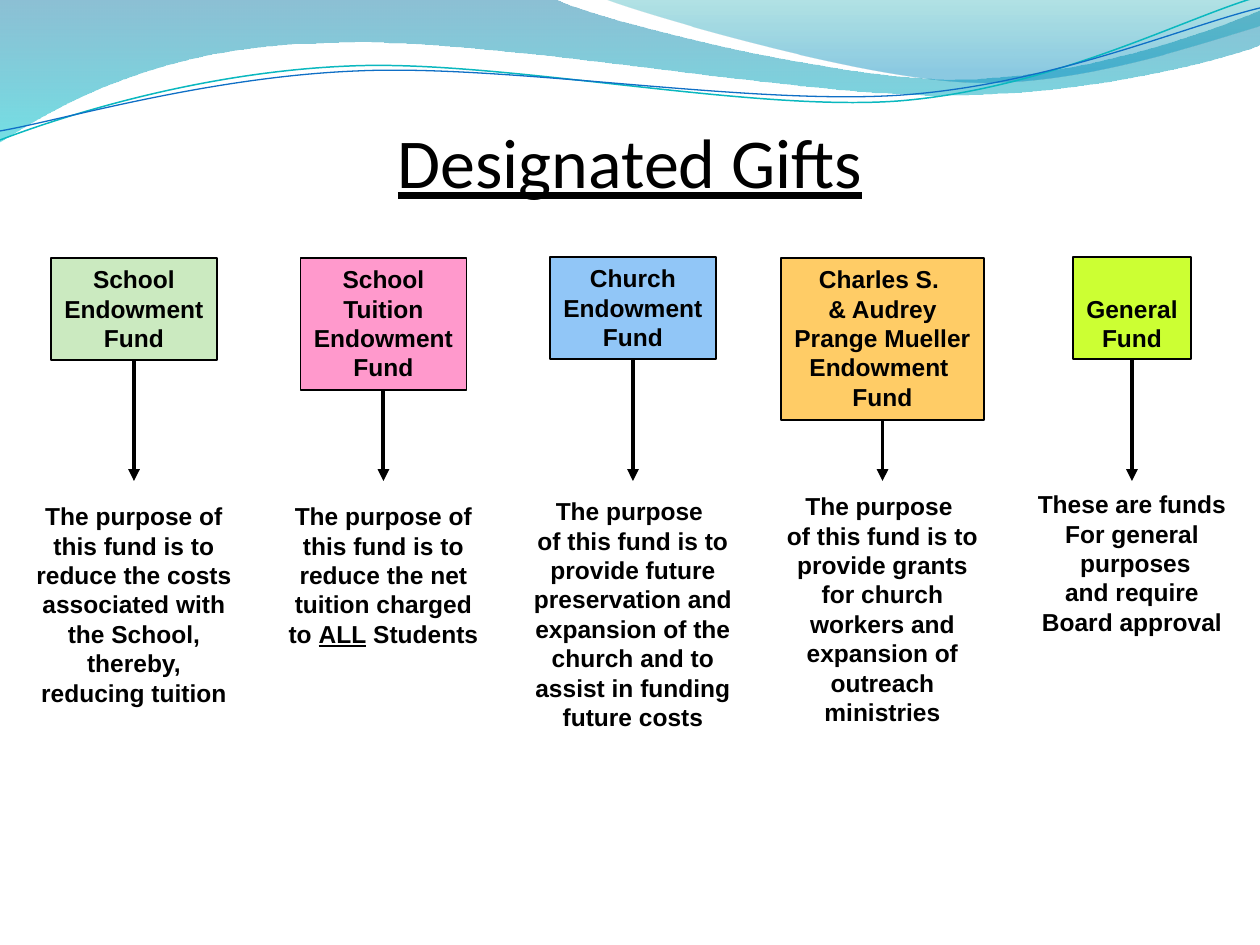
from lxml import etree
from pptx import Presentation
from pptx import util as u
from pptx.dml.color import RGBColor
from pptx.enum import shapes, text
from pptx.oxml.ns import qn

PX = 914400 / 126
COLORS = {
    "ink": "000000", "deep": "0074A1", "cyan": "00C6CF", "teal": "00A1A9",
    "sky": "008BBF", "teal line": "0AB8BF", "blue line": "0F6FC6",
    "green": "CBEAC0", "pink": "FF99CC", "blue": "91C6F7",
    "orange": "FFCC66", "lime": "CCFF33",
}
RGB = {name: RGBColor.from_string(value) for name, value in COLORS.items()}


def write(frame, lines):
    """Fill a frame with centred bold lines; words between underscores are underlined."""
    frame.word_wrap = True
    frame.text = "\n".join(lines)
    for paragraph in frame.paragraphs:
        paragraph.alignment = text.PP_ALIGN.CENTER
        parts = paragraph.text.split("_")
        paragraph.text = parts[0]
        for part in parts[1:]:
            paragraph.add_run().text = part
        for i, run in enumerate(paragraph.runs):
            run.font.name, run.font.size, run.font.bold = "Arial", u.Pt(14), True
            run.font.color.rgb = RGB["ink"]
            if i % 2:
                run.font.underline = True


def draw_wave(start, steps, closed):
    """Trace straight steps (one point) and Bezier steps (three points) from start."""
    points = [(step[i] * PX, step[i + 1] * PX)
              for step in steps for i in range(0, len(step), 2)]
    builder = slide.shapes.build_freeform(start[0] * PX, start[1] * PX)
    builder.add_line_segments(points, close=closed)
    wave = builder.convert_to_shape()
    wave.shadow.inherit = False
    # Merge the three points of each Bezier step into one curve
    segments = iter(list(wave._element.spPr.iter(qn("a:lnTo"))))
    for step in steps:
        first = next(segments)
        if len(step) == 6:
            first.tag = qn("a:cubicBezTo")
            for _ in range(2):
                segment = next(segments)
                first.append(segment[0])
                segment.getparent().remove(segment)
    return wave


prs = Presentation()
prs.slide_width, prs.slide_height = u.Inches(10), u.Inches(7.5)
slide = prs.slides.add_slide(prs.slide_layouts[5])

# Translucent waves: start, steps, gradient stops (position, colour, opacity %)
waves = [
    ((0, 0),
     [(554, -1), (600, 21, 837, 79, 955, 79), (1075, 79, 1207, 33, 1260, 11),
      (1261, 45), (1237, 55, 1096, 96, 940, 95), (784, 95, 481, 35, 324, 43),
      (163, 45, 58, 105, -1, 142)],
     [(0, "deep", 45), (1, "cyan", 55)]),
    ((604, -1),
     [(641, 14, 859, 78, 969, 82), (1079, 87, 1211, 40, 1260, 26), (1260, 0)],
     [(0, "teal", 30), (0.8, "sky", 45)]),
]
for start, steps, stops in waves:
    wave = draw_wave(start, steps, True)
    wave.fill.gradient()
    wave.fill.gradient_angle = 270
    for stop, (position, color, _) in zip(wave.fill.gradient_stops, stops):
        stop.position = position
        stop.color.rgb = RGB[color]
    for node, (_, _, opacity) in zip(wave._element.spPr.iter(qn("a:srgbClr")), stops):
        etree.SubElement(node, qn("a:alpha"), val=str(opacity * 1000))
    wave.line.fill.background()

# Thin wave lines
wave_lines = [
    ((0, 140), [(60, 117, 199, 72, 349, 66), (498, 59, 747, 112, 898, 101),
                (1050, 89, 1182, 19, 1257, -3)], "teal line", 0.85),
    ((0, 131), [(59, 121, 207, 77, 357, 71), (508, 64, 752, 106, 903, 95),
                (1053, 84, 1185, 26, 1260, 8)], "blue line", 0.75),
]
for start, steps, color, width in wave_lines:
    wave = draw_wave(start, steps, False)
    wave.fill.background()
    wave.line.color.rgb = RGB[color]
    wave.line.width = u.Pt(width)

# Title
title = slide.shapes.title
title.left, title.top, title.width, title.height = (int(v * PX) for v in (336, 112, 588, 97))
title.text_frame.text = "Designated Gifts"
title.text_frame.vertical_anchor = text.MSO_ANCHOR.TOP
title.text_frame.paragraphs[0].alignment = text.PP_ALIGN.CENTER
title_font = title.text_frame.paragraphs[0].runs[0].font
title_font.name, title_font.size, title_font.underline = "Calibri", u.Pt(40), True
title_font.color.rgb = RGB["ink"]

# Funds: name, anchor, colour, box top, width, height, purpose, purpose top, height
TOP, BOTTOM = text.MSO_ANCHOR.TOP, text.MSO_ANCHOR.BOTTOM
funds = [
    (["School", "Endowment", "Fund"], TOP, "green", 258, 166, 102,
     ["The purpose of this fund is to reduce the costs associated with the School, "
      "thereby, reducing tuition"], 495, 219),
    (["School", "Tuition Endowment Fund"], TOP, "pink", 258, 166, 132,
     ["The purpose of this fund is to reduce the net tuition charged to _ALL_ Students"],
     495, 160),
    (["Church", "Endowment", "Fund"], TOP, "blue", 257, 166, 102,
     ["The purpose ", "of this fund is to provide future preservation and expansion "
      "of the church and to assist in funding future costs"], 490, 248),
    (["Charles S. ", "& Audrey", "Prange Mueller", "Endowment ", "Fund"],
     TOP, "orange", 258, 203, 162,
     ["The purpose ", "of this fund is to provide grants for church workers and "
      "expansion of outreach ministries"], 485, 248),
    (["General ", "Fund"], BOTTOM, "lime", 257, 118, 102,
     ["These are funds", "For general", " purposes", "and require", "Board approval"],
     483, 160),
]
FIRST_CENTER, LAST_CENTER, ARROW_END, PURPOSE_WIDTH = 134, 1132, 481, 227
pitch = (LAST_CENTER - FIRST_CENTER) / (len(funds) - 1)
for i, (name, anchor, color, top, width, height,
        purpose, purpose_top, purpose_height) in enumerate(funds):
    center = FIRST_CENTER + i * pitch

    # Fund box
    fund = slide.shapes.add_shape(
        shapes.MSO_SHAPE.RECTANGLE,
        *(int(v * PX) for v in (center - width / 2, top, width, height)))
    fund.shadow.inherit = False
    fund.fill.solid()
    fund.fill.fore_color.rgb = RGB[color]
    fund.line.color.rgb = RGB["ink"]
    fund.line.width = u.Pt(0.75)
    write(fund.text_frame, name)
    fund.text_frame.vertical_anchor = anchor

    # Arrow to the purpose
    middle = fund.left + fund.width // 2
    arrow = slide.shapes.add_connector(
        shapes.MSO_CONNECTOR.STRAIGHT, middle, fund.top + fund.height,
        middle, int(ARROW_END * PX))
    arrow.begin_connect(fund, 2)
    arrow.line.color.rgb = RGB["ink"]
    arrow.line.width = u.Pt(2.25)
    etree.SubElement(arrow.line._get_or_add_ln(), qn("a:tailEnd"), type="triangle")
    etree.SubElement(arrow._element.spPr, qn("a:effectLst"))

    # Purpose
    note = slide.shapes.add_textbox(
        *(int(v * PX) for v in (center - PURPOSE_WIDTH / 2, purpose_top,
                                PURPOSE_WIDTH, purpose_height)))
    write(note.text_frame, purpose)

prs.save("out.pptx")
